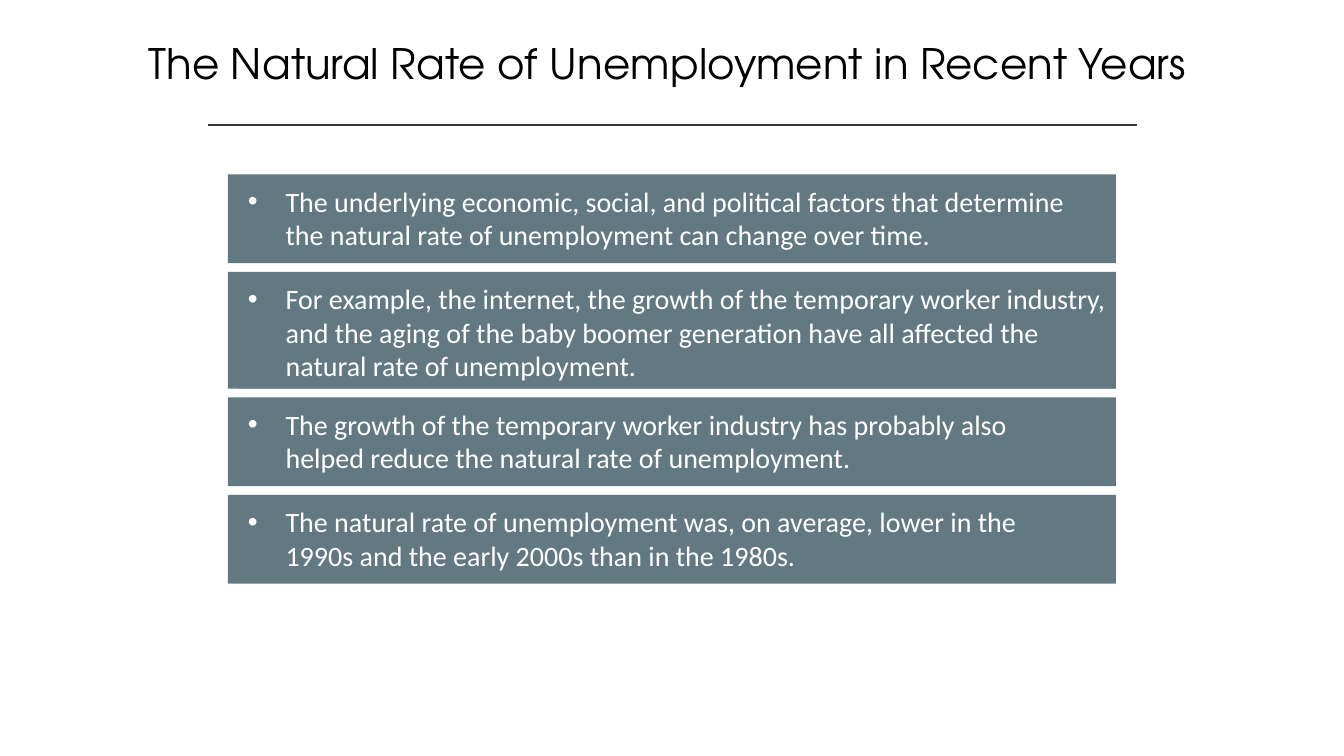
import pptx
import pptx.util
import pptx.dml.color
import pptx.enum.shapes
import pptx.enum.text
import pptx.oxml.ns
import lxml.etree

Pt = pptx.util.Pt
COLORS = {"title": "000000", "rule": "323542", "panel": "627981", "text": "FFFFFF"}
PANELS = [
    (2, 12.2, "The underlying economic, social, and political factors that determine "
              "the natural rate of unemployment can change over time."),
    (3, 0, "For example, the internet, the growth of the temporary worker industry, "
           "and the aging of the baby boomer generation have all affected the "
           "natural rate of unemployment."),
    (2, 12.2, "The growth of the temporary worker industry has probably also "
              "helped reduce the natural rate of unemployment."),
    (2, 12.2, "The natural rate of unemployment was, on average, lower in the "
              "1990s and the early 2000s than in the 1980s."),
]
PANEL_HEIGHTS = {2: 63.4, 3: 83.5}
LINE_HEIGHT = 24.2


def rgb(name):
    """Return the named colour."""
    return pptx.dml.color.RGBColor.from_string(COLORS[name])


def add_text(tf, text, *, size, font, color, align, bullet=False):
    """Write one formatted paragraph into a text frame."""
    tf.word_wrap = True
    tf.auto_size = pptx.enum.text.MSO_AUTO_SIZE.NONE
    p = tf.paragraphs[0]
    p.alignment = align
    if bullet:
        pPr = p._p.get_or_add_pPr()
        pPr.set("marL", str(Pt(27)))
        pPr.set("indent", str(-Pt(27)))
        qn = pptx.oxml.ns.qn
        lxml.etree.SubElement(pPr, qn("a:buFont")).set("typeface", "Arial")
        lxml.etree.SubElement(pPr, qn("a:buChar")).set("char", "•")
    r = p.add_run()
    r.text = text
    r.font.size = Pt(size)
    r.font.name = font
    r.font.color.rgb = rgb(color)


def add_title(s, x, y, w, h):
    """Place the slide title in its box."""
    sp = s.shapes.title
    sp.left, sp.top, sp.width, sp.height = Pt(x), Pt(y), Pt(w), Pt(h)
    tf = sp.text_frame
    tf.margin_left = tf.margin_right = 0
    tf.vertical_anchor = pptx.enum.text.MSO_ANCHOR.MIDDLE
    add_text(tf, "The Natural Rate of Unemployment in Recent Years", size=30,
             font="TeX Gyre Adventor", color="title",
             align=pptx.enum.text.PP_ALIGN.CENTER)


def add_rule(s, x, y, w):
    """Draw the thin horizontal rule under the title."""
    line = s.shapes.add_connector(pptx.enum.shapes.MSO_CONNECTOR.STRAIGHT,
                                  Pt(x), Pt(y), Pt(x + w), Pt(y))
    line.line.color.rgb = rgb("rule")
    line.line.width = Pt(1)
    lxml.etree.SubElement(line._element.spPr, pptx.oxml.ns.qn("a:effectLst"))


def add_rect(shapes, x, y, w, h):
    """Add a plain filled rectangle."""
    sp = shapes.add_shape(pptx.enum.shapes.MSO_SHAPE.RECTANGLE,
                          Pt(x), Pt(y), Pt(w), Pt(h))
    sp.shadow.inherit = False
    sp.fill.solid()
    sp.fill.fore_color.rgb = rgb("panel")
    sp.line.fill.background()
    return sp


def add_panel(s, x, y, w, h, lines, right_gap, text):
    """Group a panel with the bulleted text box inside it."""
    group = s.shapes.add_group_shape()
    add_rect(group.shapes, x, y, w, h)
    sp = add_rect(group.shapes, x + 7.2, y + 3.4, w - 7.2 - right_gap,
                  lines * LINE_HEIGHT + 7.2)
    tf = sp.text_frame
    tf.vertical_anchor = pptx.enum.text.MSO_ANCHOR.TOP
    add_text(tf, text, size=20, font="Calibri", color="text",
             align=pptx.enum.text.PP_ALIGN.LEFT, bullet=True)


def add_panels(s, x, y, w, gap):
    """Stack the panels downwards with equal gaps."""
    for lines, right_gap, text in PANELS:
        h = PANEL_HEIGHTS[lines]
        add_panel(s, x, y, w, h, lines, right_gap, text)
        y += h + gap


def main():
    """Build and save the slide."""
    prs = pptx.Presentation()
    prs.slide_width, prs.slide_height = Pt(960), Pt(540)
    s = prs.slides.add_slide(prs.slide_layouts[5])
    add_title(s, 97.2, 23, 759.6, 44)
    add_rule(s, 148.3, 89.3, 663.9)
    add_panels(s, 162.7, 124.6, 634.3, 6.2)
    prs.save("out.pptx")


if __name__ == "__main__":
    main()
